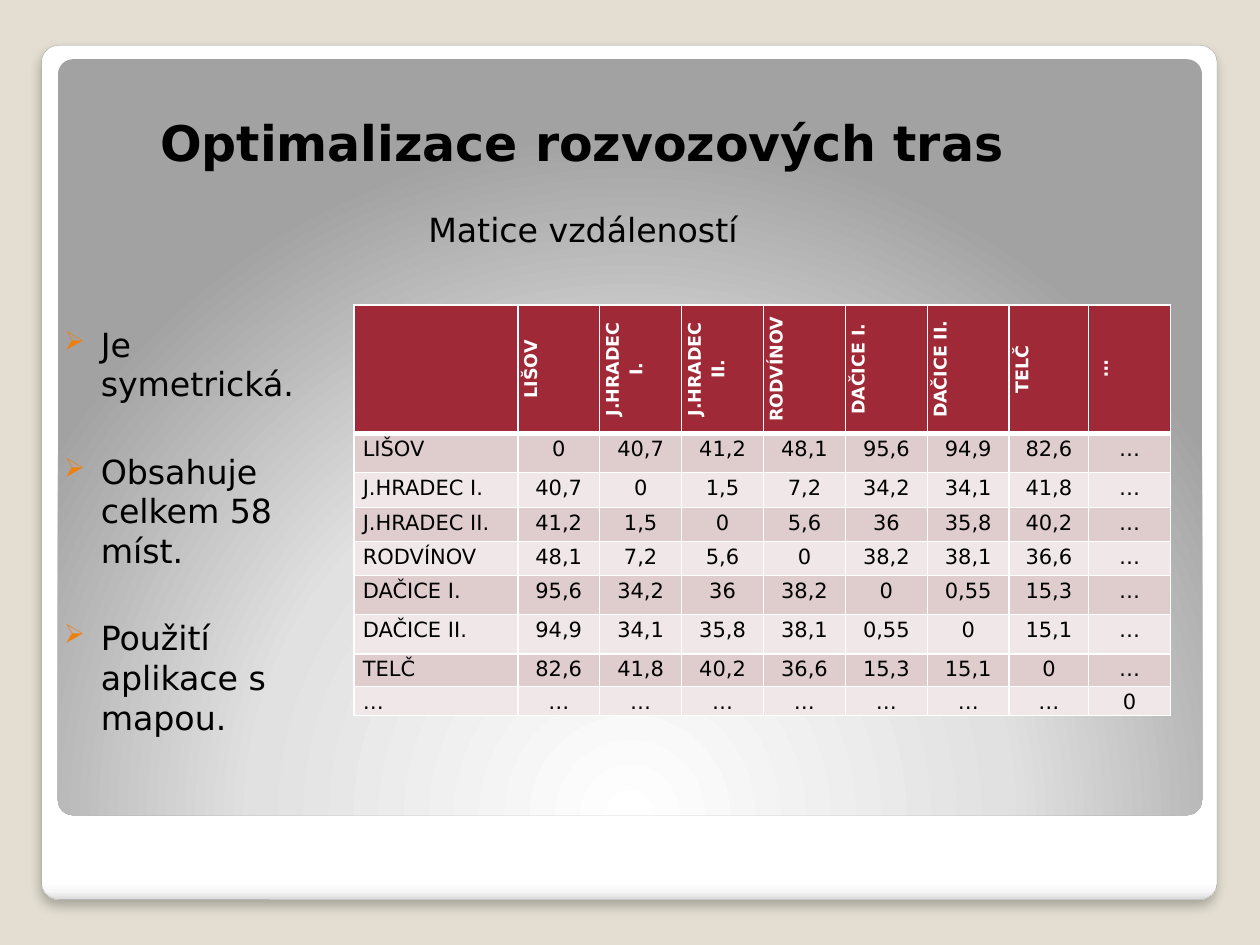
from pptx import Presentation
from pptx.dml.color import RGBColor
from pptx.enum.shapes import MSO_SHAPE
from pptx.enum.text import MSO_ANCHOR, MSO_AUTO_SIZE, PP_ALIGN
from pptx.oxml import parse_xml
from pptx.oxml.ns import nsdecls, qn
from pptx.util import Inches, Pt

ROUNDED = MSO_SHAPE.ROUNDED_RECTANGLE
BOTTOM = MSO_ANCHOR.BOTTOM
NO_AUTOFIT = MSO_AUTO_SIZE.NONE
LEFT, CENTER = PP_ALIGN.LEFT, PP_ALIGN.CENTER
FONT = "DejaVu Sans"
BLACK, WHITE = "000000", "FFFFFF"
HEADER_FILL, BAND_FILLS = "9F2936", ("DFCDCE", "F0E8E8")

LINEAR = '<a:lin ang="5400000" scaled="0"/>'
RADIAL = ('<a:path path="circle"><a:fillToRect l="50000" t="175000" '
          'r="50000" b="-75000"/></a:path>')

PLACES = ["LIŠOV", "J.HRADEC I.", "J.HRADEC II.", "RODVÍNOV",
          "DAČICE I.", "DAČICE II.", "TELČ", "…"]
DISTANCES = [
    "0 40,7 41,2 48,1 95,6 94,9 82,6 …",
    "40,7 0 1,5 7,2 34,2 34,1 41,8 …",
    "41,2 1,5 0 5,6 36 35,8 40,2 …",
    "48,1 7,2 5,6 0 38,2 38,1 36,6 …",
    "95,6 34,2 36 38,2 0 0,55 15,3 …",
    "94,9 34,1 35,8 38,1 0,55 0 15,1 …",
    "82,6 41,8 40,2 36,6 15,3 15,1 0 …",
    "… … … … … … … 0",
]
COLUMN_WIDTHS = [1.3] + [0.65] * 6 + [0.63, 0.65]
ROW_HEIGHTS = [1.02, 0.31, 0.28, 0.27, 0.27, 0.31, 0.31, 0.26, 0.23]
NOTES = ["Je symetrická.", "Obsahuje celkem 58 míst.", "Použití aplikace s mapou."]


def color(value):
    """Return the colour for a hex string."""
    return RGBColor.from_string(value)


def add_run(paragraph, text, size, fill=BLACK, bold=False):
    """Add one formatted run to a paragraph."""
    run = paragraph.add_run()
    run.text = text
    run.font.name = FONT
    run.font.size = Pt(size)
    run.font.bold = bold
    run.font.color.rgb = color(fill)


def add_panel(slide, left, top, width, height, stops, direction):
    """Add a rounded panel with a gradient fill and no line or shadow."""
    panel = slide.shapes.add_shape(
        ROUNDED, Inches(left), Inches(top), Inches(width), Inches(height))
    panel.adjustments[0] = 0.02
    panel.shadow.inherit = False
    panel.line.fill.background()
    stop_xml = "".join(
        f'<a:gs pos="{position * 1000}"><a:srgbClr val="{value}"/></a:gs>'
        for position, value in stops)
    gradient = parse_xml(
        f'<a:gradFill {nsdecls("a")} rotWithShape="1">'
        f'<a:gsLst>{stop_xml}</a:gsLst>{direction}</a:gradFill>')
    panel.element.spPr.find(qn("a:prstGeom")).addnext(gradient)
    return panel


def add_card(slide):
    """Add the white outer card with its thin outline and soft shadow."""
    stops = [(0, WHITE), (98, WHITE), (99, "F7F7F7"), (100, "DADADA")]
    card = add_panel(slide, 0.33, 0.36, 9.33, 6.78, stops, LINEAR)
    card.line.color.rgb = color("A4A4A4")
    card.line.width = Pt(0.16)
    card.element.spPr.find(qn("a:effectLst")).append(parse_xml(
        f'<a:outerShdw {nsdecls("a")} blurRad="{Pt(6)}" dist="{Pt(4)}" '
        'dir="5400000" algn="t" rotWithShape="0"><a:srgbClr val="000000">'
        '<a:alpha val="25000"/></a:srgbClr></a:outerShdw>'))


def add_title(slide, text):
    """Place the title above the panels and format it."""
    title = slide.shapes.title
    slide.shapes.element.append(title.element)
    title.left, title.top = Inches(1.17), Inches(0.55)
    title.width, title.height = Inches(7.15), Inches(0.86)
    title.text_frame.auto_size = NO_AUTOFIT
    title.text_frame.vertical_anchor = BOTTOM
    paragraph = title.text_frame.paragraphs[0]
    paragraph.alignment = LEFT
    add_run(paragraph, text, 28, bold=True)


def add_text_box(slide, left, top, width, height, inset_top=0.1):
    """Add a wrapping text box and return its text frame."""
    box = slide.shapes.add_textbox(
        Inches(left), Inches(top), Inches(width), Inches(height))
    frame = box.text_frame
    frame.word_wrap = True
    frame.margin_left, frame.margin_right = Inches(0.2), Inches(0.1)
    frame.margin_top, frame.margin_bottom = Inches(inset_top), Inches(0.05)
    return frame


def add_bullet(paragraph):
    """Give a paragraph a hanging orange arrow bullet."""
    properties = paragraph._p.get_or_add_pPr()
    properties.set("marL", str(Inches(0.29)))
    properties.set("indent", str(-Inches(0.29)))
    for content in ('buClr {}><a:srgbClr val="F07F09"/></a:buClr>',
                    'buSzPct {} val="80000"/>',
                    'buChar {} char="➢"/>'):
        properties.append(parse_xml("<a:" + content.format(nsdecls("a"))))


def add_notes_list(slide):
    """Add the bulleted remarks beside the table."""
    frame = add_text_box(slide, 0.31, 2.11, 2.42, 3.75, inset_top=0.46)
    for index, note in enumerate(NOTES):
        paragraph = frame.add_paragraph() if index else frame.paragraphs[0]
        paragraph.space_before = Pt(27 if index else 0)
        add_bullet(paragraph)
        add_run(paragraph, note, 19)


def set_borders(cell, top, bottom):
    """Draw white cell borders with the given top and bottom widths."""
    properties = cell._tc.get_or_add_tcPr()
    for side, width in (("L", 1), ("R", 1), ("T", top), ("B", bottom)):
        properties.append(parse_xml(
            f'<a:ln{side} {nsdecls("a")} w="{Pt(width)}"><a:solidFill>'
            f'<a:srgbClr val="{WHITE}"/></a:solidFill></a:ln{side}>'))


def format_cell(cell, text, row, column):
    """Fill one cell of the distance matrix."""
    header = row == 0
    set_borders(cell, 3 if row == 1 else 1, 3 if header else 1)
    cell.fill.solid()
    cell.fill.fore_color.rgb = color(
        HEADER_FILL if header else BAND_FILLS[(row - 1) % 2])
    cell.margin_left = cell.margin_right = Inches(0.07)
    cell.margin_top = cell.margin_bottom = 0
    if not text:
        return
    paragraph = cell.text_frame.paragraphs[0]
    paragraph.line_spacing = 1.15
    paragraph.alignment = CENTER if header or column else LEFT
    if header:
        cell._tc.get_or_add_tcPr().set("vert", "vert270")
        add_run(paragraph, text, 10, WHITE, bold=True)
    else:
        add_run(paragraph, text, 12)


def add_distance_table(slide):
    """Add the matrix of distances between places."""
    rows = [[""] + PLACES]
    rows += [[place] + line.split() for place, line in zip(PLACES, DISTANCES)]
    table = slide.shapes.add_table(
        len(rows), len(rows[0]), Inches(2.81), Inches(2.42),
        Inches(sum(COLUMN_WIDTHS)), Inches(sum(ROW_HEIGHTS))).table
    for column, width in zip(table.columns, COLUMN_WIDTHS):
        column.width = Inches(width)
    for row, height in zip(table.rows, ROW_HEIGHTS):
        row.height = Inches(height)
    for row, texts in enumerate(rows):
        for column, text in enumerate(texts):
            format_cell(table.cell(row, column), text, row, column)


def main():
    """Build the slide and save it."""
    presentation = Presentation()
    presentation.slide_width, presentation.slide_height = Inches(10), Inches(7.5)
    slide = presentation.slides.add_slide(presentation.slide_layouts[5])
    slide.background.fill.solid()
    slide.background.fill.fore_color.rgb = color("E3DED1")
    add_card(slide)
    add_panel(slide, 0.46, 0.47, 9.08, 6,
              [(0, WHITE), (55, "E1E1E1"), (100, "A2A2A2")], RADIAL)
    add_title(slide, "Optimalizace rozvozových tras")
    add_notes_list(slide)
    add_distance_table(slide)
    subtitle = add_text_box(slide, 3.2, 1.56, 2.97, 0.55).paragraphs[0]
    subtitle.space_before = Pt(2.5)
    add_run(subtitle, "Matice vzdáleností", 19)
    presentation.save("out.pptx")


if __name__ == "__main__":
    main()
